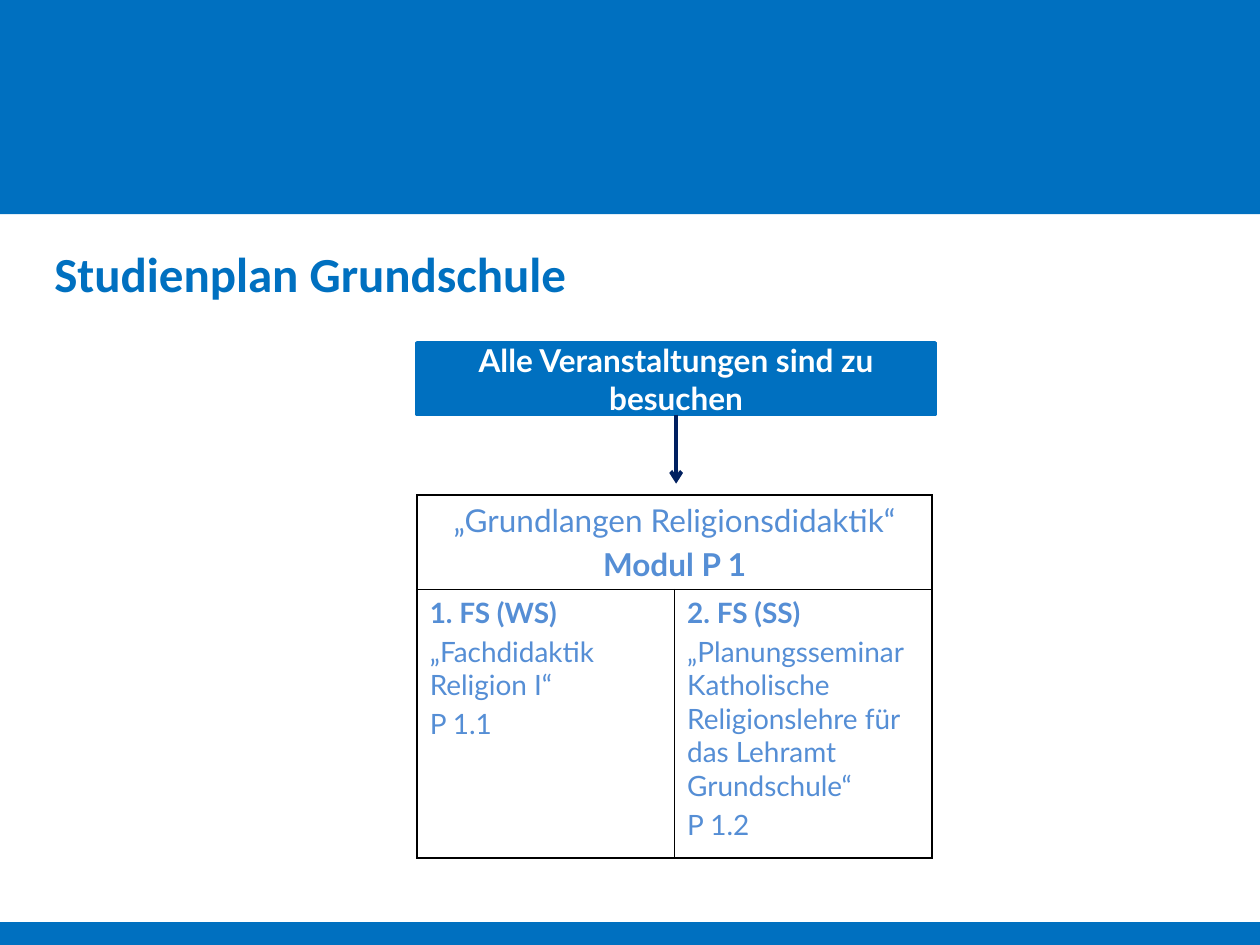
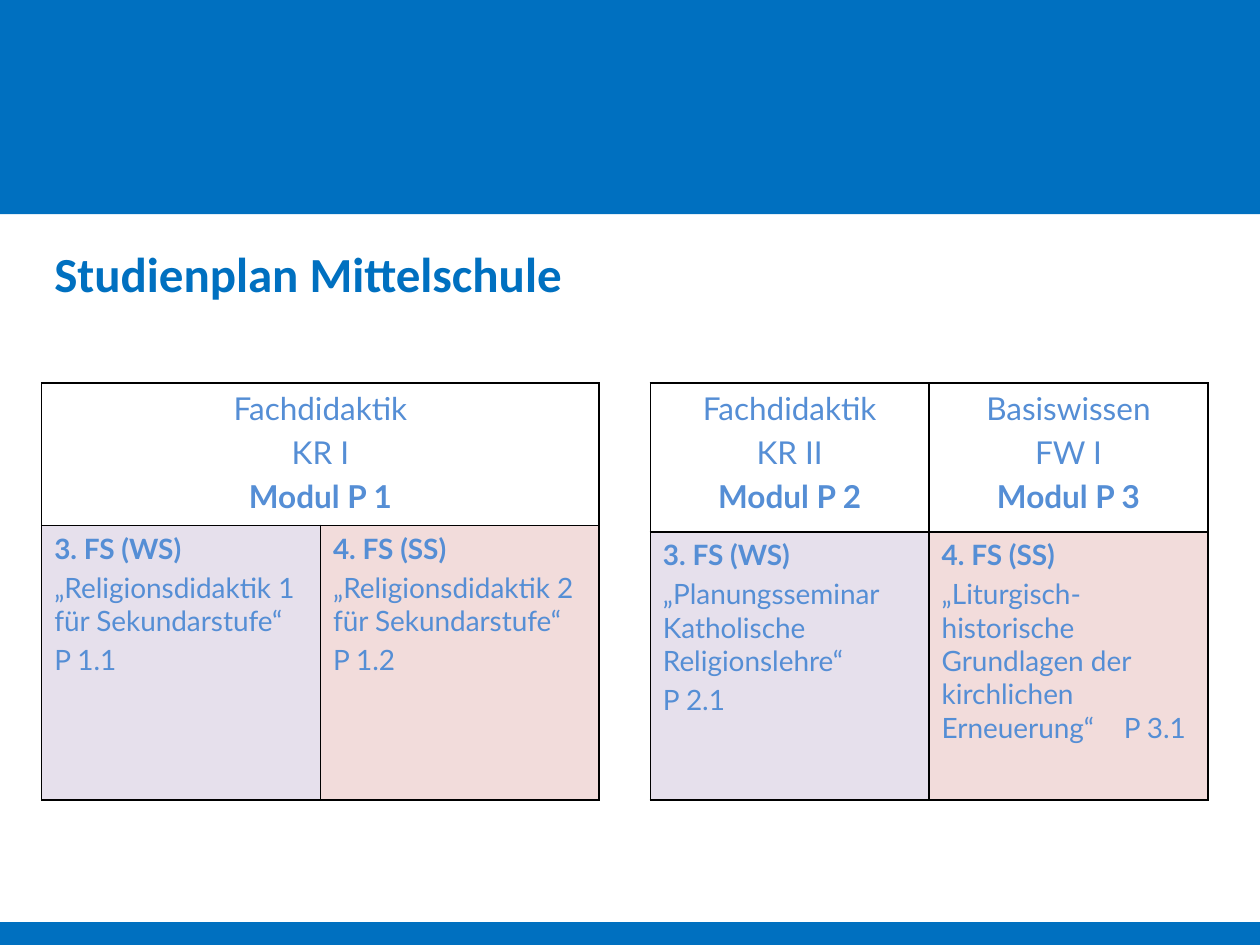
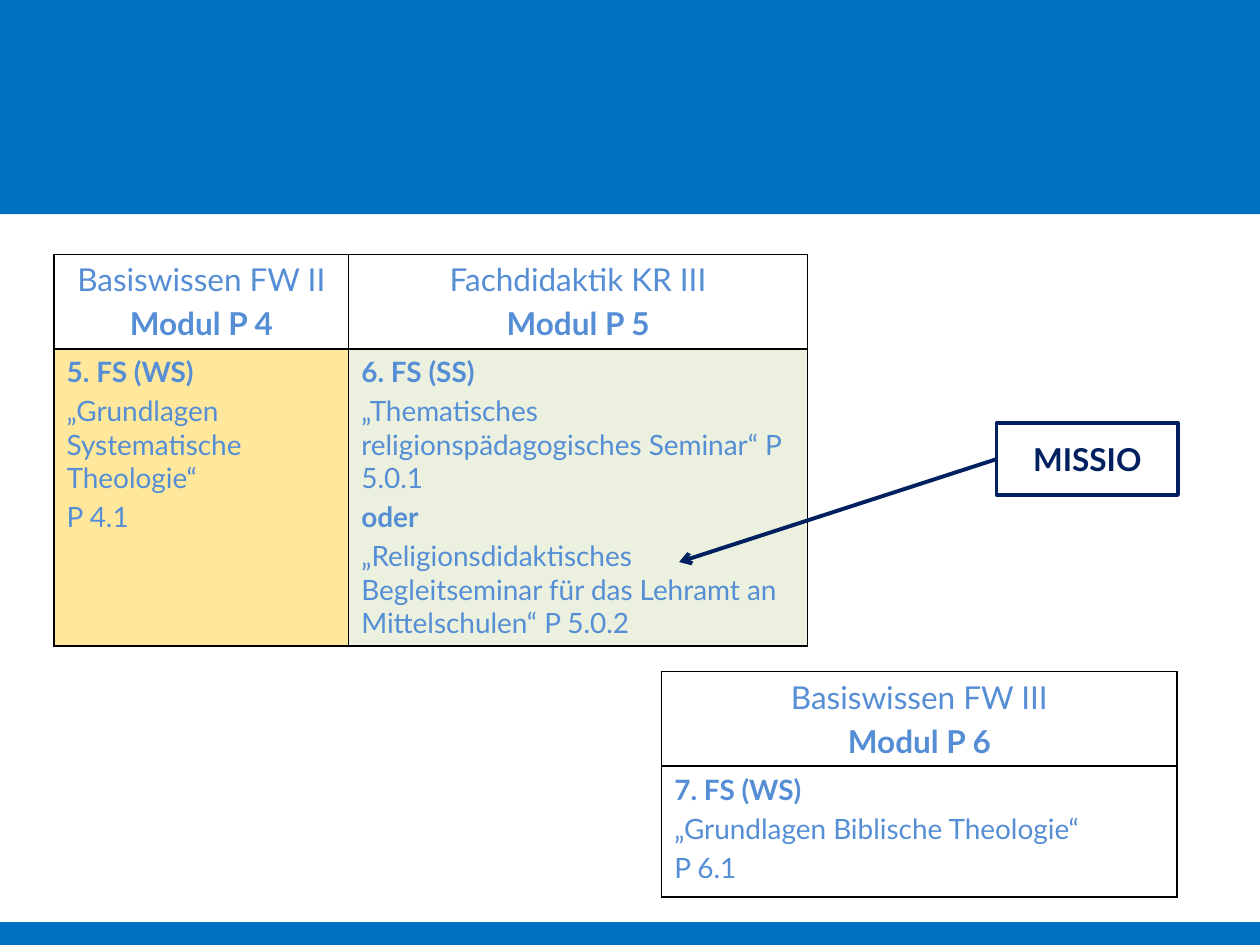
from dataclasses import dataclass
from lxml.etree import SubElement
from pptx import Presentation
from pptx.dml.color import RGBColor
from pptx.enum.shapes import MSO_CONNECTOR, MSO_SHAPE
from pptx.enum.text import MSO_ANCHOR, MSO_AUTO_SIZE, PP_ALIGN
from pptx.oxml.ns import qn
from pptx.util import Cm, Pt


@dataclass(frozen=True)
class Theme:
    blue: str = "0070C0"
    navy: str = "002060"
    sky: str = "558ED5"
    white: str = "FFFFFF"
    black: str = "000000"
    lilac: str = "E6E0EC"
    rose: str = "F2DCDB"
    gold: str = "FFE79B"
    green: str = "EBF1DE"
    title: int = 28
    head: int = 18
    body: int = 16
    edge: float = 1
    frame: float = 2
    arrow: float = 2.25
    font: str = "Lato"
    display: str = "Calibri"


WIDTH, HEIGHT = 25.4, 19.05
BANDS = ((0, 4.32), (18.59, 0.46))
TAB = 3.67


def put(item, values):
    for name, value in values.items():
        setattr(item, name, value)


def paint(fill, tone):
    if tone:
        fill.solid()
        fill.fore_color.rgb = RGBColor.from_string(tone)
    else:
        fill.background()


class Deck:
    def __init__(self, theme):
        self.theme = theme
        self.show = Presentation()
        put(self.show, {"slide_width": Cm(WIDTH), "slide_height": Cm(HEIGHT)})
        self.slide = None

    def page(self, title=None):
        theme = self.theme
        layout = self.show.slide_layouts[5 if title else 6]
        self.slide = self.show.slides.add_slide(layout)
        if title:
            head = self.slide.shapes.title
            put(head, {"left": Cm(0.84), "top": Cm(4.78), "width": Cm(21.59), "height": Cm(1.45)})
            put(head.text_frame, {"vertical_anchor": MSO_ANCHOR.TOP, "word_wrap": True,
                                  "auto_size": MSO_AUTO_SIZE.SHAPE_TO_FIT_TEXT})
            self.label(head.text_frame, ["*" + title], theme.title, theme.blue,
                       PP_ALIGN.LEFT, theme.display)

    def label(self, frame, lines, size, tone, align, font=None):
        for index, line in enumerate(lines):
            para = frame.add_paragraph() if index else frame.paragraphs[0]
            if "\t" in line:
                tabs = SubElement(para._p.get_or_add_pPr(), qn("a:tabLst"))
                SubElement(tabs, qn("a:tab"), pos=str(Cm(TAB)), algn="l")
            para.alignment = align
            if index:
                para.space_before = Pt(size * 0.2)
            run = para.add_run()
            run.text = line.removeprefix("*")
            put(run.font, {"name": font or self.theme.font, "size": Pt(size),
                           "bold": line.startswith("*")})
            run.font.color.rgb = RGBColor.from_string(tone)

    def box(self, left, top, width, height, fill=None, line=None, text=None, tone=None):
        theme = self.theme
        shape = self.slide.shapes.add_shape(
            MSO_SHAPE.RECTANGLE, Cm(left), Cm(top), Cm(width), Cm(height))
        shape.shadow.inherit = False
        paint(shape.fill, fill)
        paint(shape.line.fill, line)
        if line:
            shape.line.width = Pt(theme.frame)
        if text:
            put(shape.text_frame, {"word_wrap": True, "vertical_anchor": MSO_ANCHOR.MIDDLE})
            self.label(shape.text_frame, ["*" + text], theme.head, tone, PP_ALIGN.CENTER)
        return shape

    def bands(self):
        tree = self.show.slide_master.shapes.element
        for index, (top, height) in enumerate(BANDS):
            band = self.box(0, top, WIDTH, height, self.theme.blue).element
            band.xpath("./p:nvSpPr/p:cNvPr")[0].set("id", str(20 + index))
            tree.insert(2 + index, band)

    def arrow(self, box, side, right, down):
        link = self.slide.shapes.add_connector(
            MSO_CONNECTOR.STRAIGHT, box.left, box.top, right, down)
        link.begin_connect(box, side)
        link.line.width = Pt(self.theme.arrow)
        paint(link.line.fill, self.theme.navy)
        props = link.element.spPr
        SubElement(props.find(qn("a:ln")), qn("a:tailEnd"), type="arrow")
        SubElement(props, qn("a:effectLst"))

    def edges(self, cell):
        props = cell._tc.get_or_add_tcPr()
        for side in "LRTB":
            line = SubElement(props, qn("a:ln" + side), w=str(Pt(self.theme.edge)))
            fill = SubElement(line, qn("a:solidFill"))
            SubElement(fill, qn("a:srgbClr"), val=self.theme.black)

    def grid(self, left, top, widths, heights, heads, bodies, fills):
        theme = self.theme
        table = self.slide.shapes.add_table(
            2, len(widths), Cm(left), Cm(top), Cm(sum(widths)), Cm(sum(heights))).table
        put(table, {"first_row": False, "horz_banding": False})
        for col, width in zip(table.columns, widths):
            col.width = Cm(width)
        for row, height in zip(table.rows, heights):
            row.height = Cm(height)
        if len(heads) < len(widths):
            table.cell(0, 0).merge(table.cell(0, len(widths) - 1))
        looks = ((heads, theme.head, PP_ALIGN.CENTER, [None] * len(widths)),
                 (bodies, theme.body, PP_ALIGN.LEFT, fills))
        for row, (texts, size, align, tones) in enumerate(looks):
            for col, tone in enumerate(tones):
                cell = table.cell(row, col)
                self.edges(cell)
                paint(cell.fill, tone)
                if col < len(texts):
                    self.label(cell.text_frame, texts[col], size, theme.sky, align)


def main():
    theme = Theme()
    deck = Deck(theme)

    deck.page("Studienplan Grundschule")
    deck.bands()
    notice = deck.box(8.41, 6.91, 10.44, 1.45, theme.blue, theme.blue,
                      "Alle Veranstaltungen sind zu besuchen", theme.white)
    deck.grid(8.41, 9.98, [5.19, 5.19], [1.9, 5.41],
              [["„Grundlangen Religionsdidaktik“", "*Modul P 1"]],
              [["*1. FS (WS)", "„Fachdidaktik Religion I“", "P 1.1"],
               ["*2. FS (SS)", "„Planungsseminar Katholische Religionslehre für "
                "das Lehramt Grundschule“", "P 1.2"]],
              [None, None])
    deck.arrow(notice, 2, notice.left + notice.width // 2, Cm(9.75))

    deck.page("Studienplan Mittelschule")
    pair, fills = [5.62, 5.62], [theme.lilac, theme.rose]
    deck.grid(0.84, 7.72, pair, [2.87, 5.54],
              [["Fachdidaktik", "KR I", "*Modul P 1"]],
              [["*3. FS (WS)", "„Religionsdidaktik 1 für Sekundarstufe“", "P 1.1"],
               ["*4. FS (SS)", "„Religionsdidaktik 2 für Sekundarstufe“", "P 1.2"]],
              fills)
    deck.grid(13.11, 7.72, pair, [3, 5.41],
              [["Fachdidaktik", "KR II", "*Modul P 2"],
               ["Basiswissen", "FW I", "*Modul P 3"]],
              [["*3. FS (WS)", "„Planungsseminar Katholische Religionslehre“", "P 2.1"],
               ["*4. FS (SS)", "„Liturgisch-historische Grundlagen der "
                "kirchlichen Erneuerung“\tP 3.1"]],
              fills)

    deck.page()
    deck.grid(1.09, 5.13, [5.94, 9.25], [1.9, 5.99],
              [["Basiswissen FW II", "*Modul P 4"],
               ["Fachdidaktik KR III", "*Modul P 5"]],
              [["*5. FS (WS)", "„Grundlagen Systematische Theologie“", "P 4.1"],
               ["*6. FS (SS)", "„Thematisches religionspädagogisches Seminar“ P 5.0.1",
                "*oder", "„Religionsdidaktisches Begleitseminar für das Lehramt an "
                "Mittelschulen“ P 5.0.2"]],
              [theme.gold, theme.green])
    deck.grid(13.34, 13.54, [10.39], [1.9, 2.64],
              [["Basiswissen FW III", "*Modul P 6"]],
              [["*7. FS (WS)", "„Grundlagen Biblische Theologie“", "P 6.1"]],
              [None])
    permit = deck.box(20.09, 8.53, 3.66, 1.45, None, theme.navy, "MISSIO", theme.navy)
    deck.arrow(permit, 1, Cm(13.69), Cm(11.33))

    deck.show.save("out.pptx")


if __name__ == "__main__":
    main()
